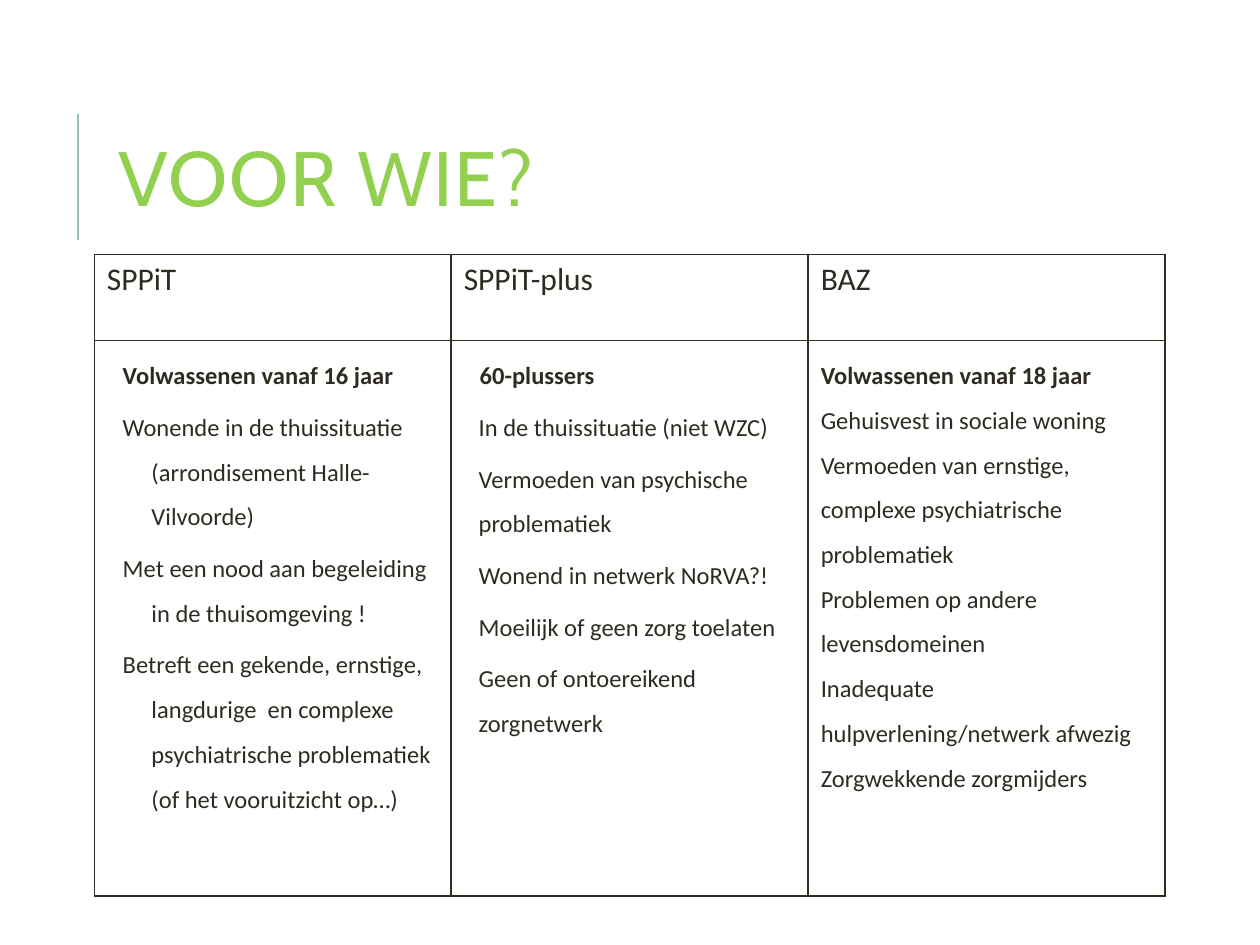
from lxml import etree
from pptx import Presentation
from pptx.dml.color import RGBColor
from pptx.enum.shapes import MSO_CONNECTOR
from pptx.enum.text import MSO_ANCHOR
from pptx.oxml.ns import qn
from pptx.util import Cm, Pt

STRAIGHT = MSO_CONNECTOR.STRAIGHT
MIDDLE = MSO_ANCHOR.MIDDLE

GREEN = RGBColor(0x92, 0xD0, 0x50)
TEAL = RGBColor(0x9C, 0xBE, 0xBD)
DARK = RGBColor(0x2E, 0x2B, 0x21)

TITLE_FONT = {"name": "Cabin", "size": Pt(44)}
HEADER_FONT = {"name": "Calibri", "size": Pt(18)}
BODY_FONT = {"name": "Calibri", "size": Pt(14)}

# Left margin and first-line indent
HANGING = (Cm(0.9), Cm(-0.58))
INDENTED = (Cm(0.3), Cm(0))
FLUSH = (Cm(0), Cm(0))

# Header, indent of the first line, indent of the rest, space before, lines
TARGET_GROUPS = [
    ("SPPiT", HANGING, HANGING, Pt(4), [
        "Volwassenen vanaf 16 jaar",
        "Wonende in de thuissituatie (arrondisement Halle-Vilvoorde)",
        "Met een nood aan begeleiding in de thuisomgeving !",
        "Betreft een gekende, ernstige, langdurige  en complexe "
        "psychiatrische problematiek (of het vooruitzicht op…)",
    ]),
    ("SPPiT-plus", HANGING, INDENTED, Pt(4), [
        "60-plussers",
        "In de thuissituatie (niet WZC)",
        "Vermoeden van psychische problematiek",
        "Wonend in netwerk NoRVA?!",
        "Moeilijk of geen zorg toelaten",
        "Geen of ontoereikend zorgnetwerk",
    ]),
    ("BAZ", FLUSH, FLUSH, Pt(0), [
        "Volwassenen vanaf 18 jaar",
        "Gehuisvest in sociale woning",
        "Vermoeden van ernstige, complexe psychiatrische problematiek",
        "Problemen op andere levensdomeinen",
        "Inadequate hulpverlening/netwerk afwezig",
        "Zorgwekkende zorgmijders",
    ]),
]


def add_run(paragraph, text, font_format, color, bold=False):
    run = paragraph.add_run()
    run.text = text
    for attribute, value in {**font_format, "bold": bold}.items():
        setattr(run.font, attribute, value)
    run.font.color.rgb = color
    return run


def add_accent_line(slide):
    accent = slide.shapes.add_connector(
        STRAIGHT, Cm(1.57), Cm(4.83), Cm(1.57), Cm(2.29))
    accent.line.color.rgb = TEAL
    accent.line.width = Pt(1.5)
    etree.SubElement(accent._element.spPr, qn("a:effectLst"))


def add_title(slide, text):
    title = slide.shapes.add_textbox(Cm(2.13), Cm(1.63), Cm(20.24), Cm(4.17))
    frame = title.text_frame
    frame.word_wrap = True
    frame.vertical_anchor = MIDDLE
    heading = frame.paragraphs[0]
    heading.line_spacing = 0.8
    run = add_run(heading, text, TITLE_FONT, GREEN)
    run._r.get_or_add_rPr().set("spc", "100")


def style_cell(cell):
    """Leave the cell unfilled and draw a thin dark border on every side."""
    cell.fill.background()
    properties = cell._tc.get_or_add_tcPr()
    for position, side in enumerate(("lnL", "lnR", "lnT", "lnB")):
        border = etree.Element(qn(f"a:{side}"), w=str(Pt(1)))
        fill = etree.SubElement(border, qn("a:solidFill"))
        etree.SubElement(fill, qn("a:srgbClr"), val=str(DARK))
        properties.insert(position, border)


def fill_criteria(cell, first_indent, indent, space_before, criteria):
    """Write one paragraph per criterion, the first of them in bold."""
    frame = cell.text_frame
    for index, criterion in enumerate(criteria):
        paragraph = frame.add_paragraph() if index else frame.paragraphs[0]
        paragraph.line_spacing = 1.5
        paragraph.space_before = space_before
        margin, hanging = indent if index else first_indent
        properties = paragraph._p.get_or_add_pPr()
        properties.set("marL", str(margin))
        properties.set("indent", str(hanging))
        add_run(paragraph, criterion, BODY_FONT, DARK, bold=index == 0)


def add_group_table(slide):
    table = slide.shapes.add_table(
        2, len(TARGET_GROUPS), Cm(1.9), Cm(5.13), Cm(21.59), Cm(12.93)).table
    table.first_row = False
    table.horz_banding = False
    for row, height in zip(table.rows, (Cm(1.73), Cm(11.2))):
        row.height = height
    for column, (header, *criteria) in enumerate(TARGET_GROUPS):
        header_cell, criteria_cell = (table.cell(row, column) for row in (0, 1))
        add_run(header_cell.text_frame.paragraphs[0], header, HEADER_FONT, DARK)
        fill_criteria(criteria_cell, *criteria)
        style_cell(header_cell)
        style_cell(criteria_cell)


def main():
    presentation = Presentation()
    presentation.slide_width = Cm(25.4)
    presentation.slide_height = Cm(19.05)
    slide = presentation.slides.add_slide(presentation.slide_layouts[6])
    add_accent_line(slide)
    add_title(slide, "VOOR WIE?")
    add_group_table(slide)
    presentation.save("out.pptx")


if __name__ == "__main__":
    main()
